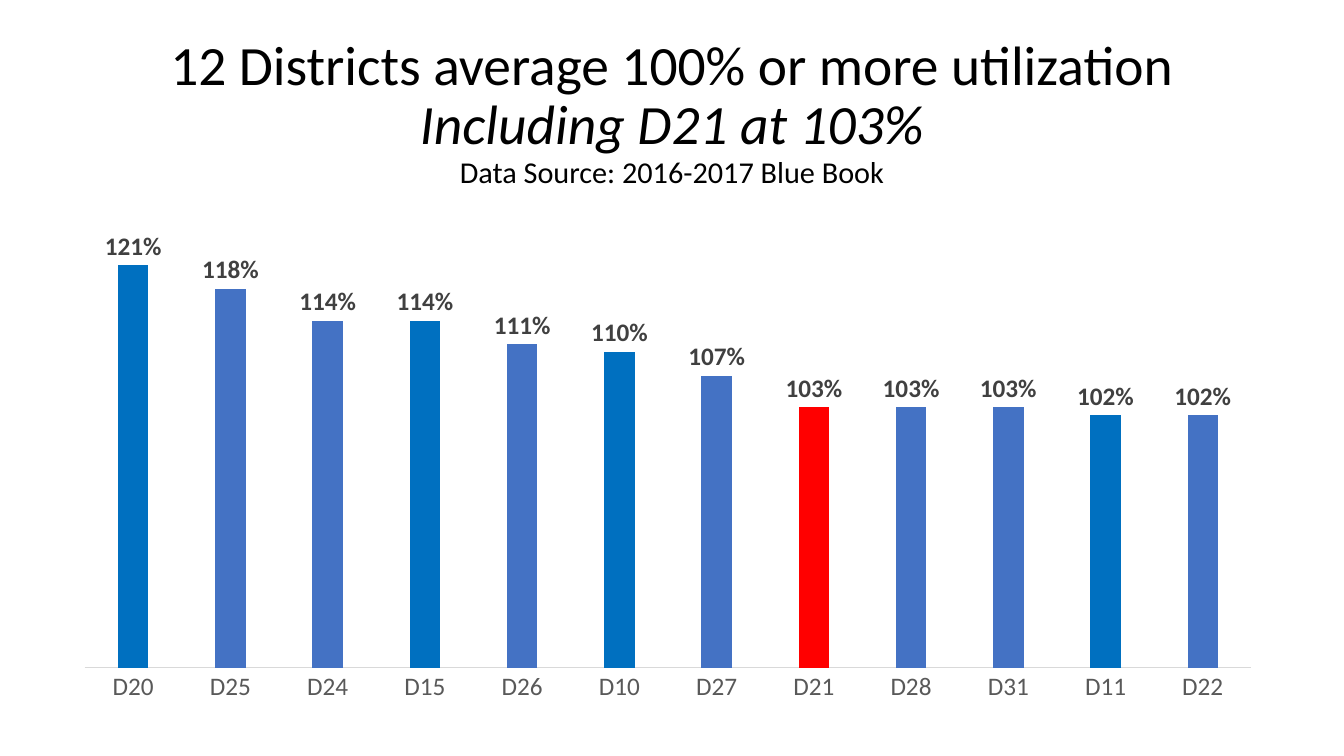
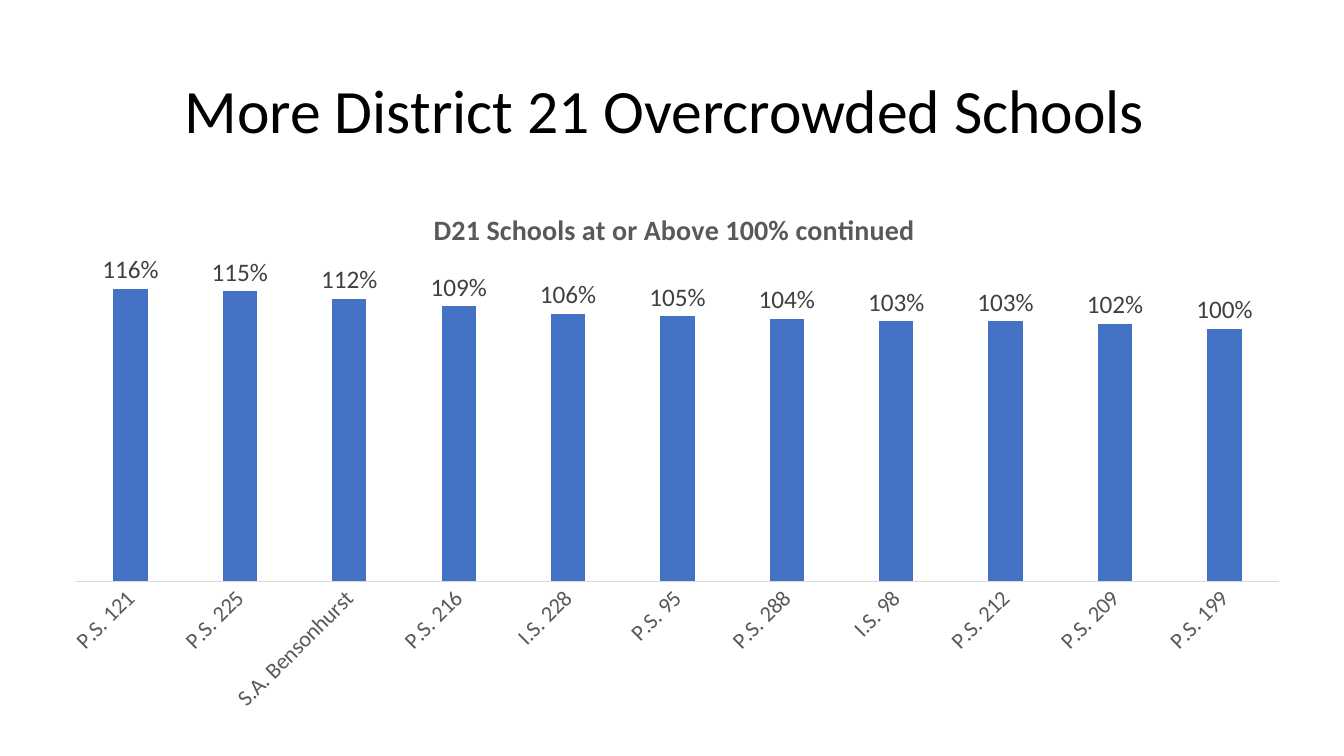
import pptx
import pptx.chart.data
import pptx.dml.color
import pptx.enum.chart
import pptx.enum.text
import pptx.oxml
import pptx.oxml.ns
import pptx.util

FONT = "Calibri"
BLACK, GRAY, DARK_GRAY, LIGHT_GRAY = "000000", "595959", "404040", "D9D9D9"
BLUE, BRIGHT_BLUE, RED = "4472C4", "0070C0", "FF0000"
COLUMNS, ROWS = 160, 90
TITLE_BOX = (11, 4.8, 138, 17.4)
TITLE_ONLY_LAYOUT = 5

presentation = pptx.Presentation()
presentation.slide_width = pptx.util.Inches(13.33)
presentation.slide_height = pptx.util.Inches(7.5)


def color(value):
    return pptx.dml.color.RGBColor.from_string(value)


def grid_box(left, top, width, height):
    column = presentation.slide_width / COLUMNS
    row = presentation.slide_height / ROWS
    return [round(length) for length in
            (left * column, top * row, width * column, height * row)]


def format_font(font, size, fill=BLACK, bold=False, italic=False):
    font.name = FONT
    font.size = pptx.util.Pt(size)
    font.color.rgb = color(fill)
    font.bold = bold
    font.italic = italic


def write_line(text_frame, text, first=False, **text_format):
    paragraph = text_frame.paragraphs[0] if first else text_frame.add_paragraph()
    paragraph.alignment = pptx.enum.text.PP_ALIGN.CENTER
    paragraph.line_spacing = 0.9
    run = paragraph.add_run()
    run.text = text
    format_font(run.font, **text_format)


def place_title(slide, lines, box=TITLE_BOX):
    title = slide.shapes.title
    title.left, title.top, title.width, title.height = grid_box(*box)
    text_frame = title.text_frame
    text_frame.word_wrap = True
    text_frame.auto_size = pptx.enum.text.MSO_AUTO_SIZE.NONE
    text_frame.vertical_anchor = pptx.enum.text.MSO_ANCHOR.MIDDLE
    for index, (text, text_format) in enumerate(lines):
        write_line(text_frame, text, first=index == 0, **text_format)


def set_plot_layout(chart, percentages):
    plot_area = chart.plots[0]._element.getparent()
    for layout in plot_area.findall(pptx.oxml.ns.qn("c:layout")):
        plot_area.remove(layout)
    modes = "".join(f'<c:{side}Mode val="edge"/>' for side in "xy")
    lengths = "".join(f'<c:{name} val="{value / 100:.3f}"/>'
                      for name, value in zip("xywh", percentages))
    plot_area.insert(0, pptx.oxml.parse_xml(
        f'<c:layout {pptx.oxml.ns.nsdecls("c")}><c:manualLayout>'
        f'<c:layoutTarget val="inner"/>{modes}{lengths}'
        '</c:manualLayout></c:layout>'))


def format_axes(chart, minimum, maximum, label_size, label_angle):
    value_axis = chart.value_axis
    value_axis.minimum_scale = minimum
    value_axis.maximum_scale = maximum
    value_axis.has_major_gridlines = False
    value_axis.visible = False
    category_axis = chart.category_axis
    category_axis.major_tick_mark = pptx.enum.chart.XL_TICK_MARK.NONE
    category_axis.format.line.color.rgb = color(LIGHT_GRAY)
    category_axis.format.line.width = pptx.util.Pt(0.75)
    format_font(category_axis.tick_labels.font, label_size, GRAY)
    body = category_axis._element.find(".//" + pptx.oxml.ns.qn("a:bodyPr"))
    body.set("rot", str(label_angle * 60000))
    body.set("vert", "horz")


def format_columns(plot, highlights, bold_labels):
    plot.gap_width = 219
    plot.overlap = -27
    plot.vary_by_categories = False
    series = plot.series[0]
    series.format.fill.solid()
    series.format.fill.fore_color.rgb = color(BLUE)
    for index, category in enumerate(plot.categories):
        if category in highlights:
            fill = series.points[index].format.fill
            fill.solid()
            fill.fore_color.rgb = color(highlights[category])
    plot.has_data_labels = True
    labels = plot.data_labels
    labels.show_value = True
    labels.position = pptx.enum.chart.XL_LABEL_POSITION.OUTSIDE_END
    labels.number_format = "0%"
    labels.number_format_is_linked = False
    format_font(labels.font, 18, DARK_GRAY, bold=bold_labels)


def place_column_chart(slide, box, rates, plot_percentages, minimum, maximum,
                       label_size, label_angle=0, heading=None,
                       highlights=None, bold_labels=False):
    data = pptx.chart.data.CategoryChartData(number_format="0%")
    data.categories = list(rates)
    data.add_series("Series 1", list(rates.values()))
    chart = slide.shapes.add_chart(
        pptx.enum.chart.XL_CHART_TYPE.COLUMN_CLUSTERED,
        *grid_box(*box), data).chart
    format_font(chart.font, 10)
    chart.has_legend = False
    chart.has_title = heading is not None
    if heading:
        run = chart.chart_title.text_frame.paragraphs[0].add_run()
        run.text = heading
        format_font(run.font, 20, GRAY, bold=True)
    format_axes(chart, minimum, maximum, label_size, label_angle)
    format_columns(chart.plots[0], highlights or {}, bold_labels)
    set_plot_layout(chart, plot_percentages)


def add_chart_slide(title_lines, **chart_options):
    layout = presentation.slide_layouts[TITLE_ONLY_LAYOUT]
    slide = presentation.slides.add_slide(layout)
    place_title(slide, title_lines)
    place_column_chart(slide, **chart_options)


def main():
    add_chart_slide(
        [("12 Districts average 100% or more utilization", {"size": 39.6}),
         ("Including D21 at 103%", {"size": 39.6, "italic": True}),
         ("Data Source: 2016-2017 Blue Book", {"size": 21.6})],
        box=(6.36, 23.16, 142.68, 62.04),
        rates={"D20": 1.21, "D25": 1.18, "D24": 1.14, "D15": 1.14,
               "D26": 1.11, "D10": 1.1, "D27": 1.07, "D21": 1.03,
               "D28": 1.03, "D31": 1.03, "D11": 1.02, "D22": 1.02},
        plot_percentages=(2.6, 0, 97.4, 90.8),
        minimum=0.7, maximum=1.3, label_size=18, bold_labels=True,
        highlights={**dict.fromkeys(("D20", "D15", "D10", "D11"), BRIGHT_BLUE),
                    "D21": RED})
    add_chart_slide(
        [("More District 21 Overcrowded Schools ", {"size": 44})],
        box=(5.28, 22.44, 150, 63.72),
        rates={"P.S. 121": 1.16, "P.S. 225": 1.15, "S.A. Bensonhurst": 1.12,
               "P.S. 216": 1.09, "I.S. 228": 1.06, "P.S. 95": 1.05,
               "P.S. 288": 1.04, "I.S. 98": 1.03, "P.S. 212": 1.03,
               "P.S. 209": 1.02, "P.S. 199": 1},
        plot_percentages=(2.5, 14.5, 95.5, 58.9),
        minimum=0, maximum=1.25, label_size=16, label_angle=-45,
        heading="D21 Schools at or Above 100% continued")
    presentation.save("out.pptx")


if __name__ == "__main__":
    main()
